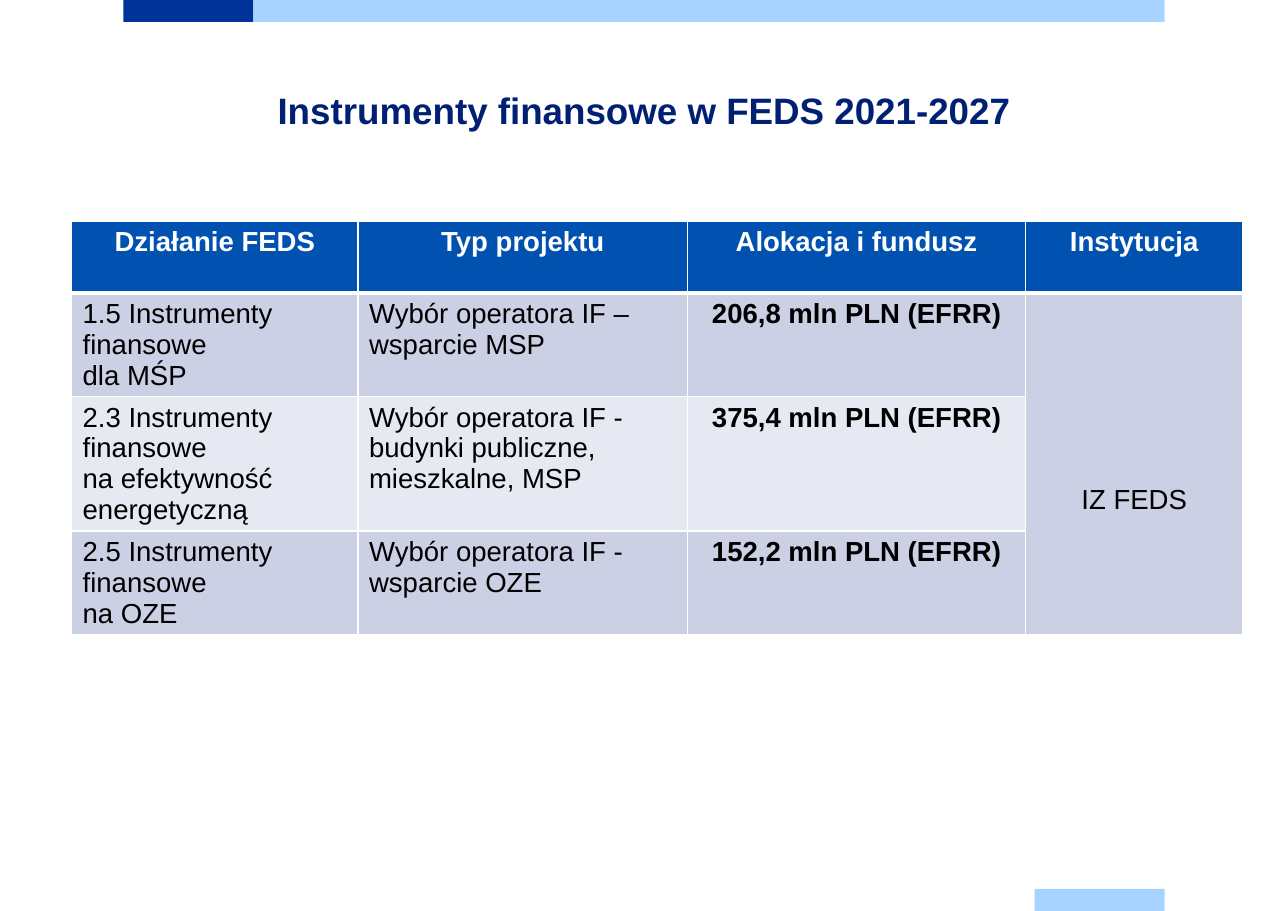
from dataclasses import dataclass

from lxml.etree import SubElement
from pptx import Presentation
from pptx.dml.color import RGBColor
from pptx.enum.shapes import MSO_SHAPE
from pptx.enum.text import MSO_ANCHOR, PP_ALIGN
from pptx.oxml.ns import qn
from pptx.slide import Slide
from pptx.table import _Cell
from pptx.text.text import _Paragraph
from pptx.util import Inches, Pt

FONT = "Arial"
COLORS = {
    "navy": "003399",
    "sky": "A6D3FF",
    "title": "002073",
    "header": "0051B0",
    "odd": "CCD0E4",
    "even": "E7E9F2",
    "white": "FFFFFF",
    "black": "000000",
}


@dataclass
class Bar:
    left: float
    top: float
    width: float
    color: str


@dataclass
class Column:
    heading: str
    width: float
    align: PP_ALIGN
    bold: bool = False


BAR_HEIGHT = 0.2
BARS = [
    Bar(1.12, 0, 1.18, "navy"),
    Bar(2.3, 0, 8.27, "sky"),
    Bar(9.39, 8.07, 1.18, "sky"),
]
COLUMNS = [
    Column("Działanie FEDS", 2.6, PP_ALIGN.LEFT),
    Column("Typ projektu", 2.99, PP_ALIGN.LEFT),
    Column("Alokacja i fundusz", 3.07, PP_ALIGN.CENTER, bold=True),
    Column("Instytucja", 1.97, PP_ALIGN.CENTER),
]
ROW_HEIGHTS = [0.65, 0.94, 1.22, 0.94]
MEASURES = [
    ["1.5 Instrumenty finansowe\ndla MŚP",
     "Wybór operatora IF – wsparcie MSP",
     "206,8 mln PLN (EFRR)", "IZ FEDS"],
    ["2.3 Instrumenty finansowe\nna efektywność energetyczną",
     "Wybór operatora IF - budynki publiczne, mieszkalne, MSP",
     "375,4 mln PLN (EFRR)", ""],
    ["2.5 Instrumenty finansowe\nna OZE",
     "Wybór operatora IF - wsparcie OZE",
     "152,2 mln PLN (EFRR)", ""],
]


def rgb(color: str) -> RGBColor:
    return RGBColor.from_string(COLORS[color])


def write(paragraph: _Paragraph, text: str, size: int, color: str,
          bold: bool, align: PP_ALIGN) -> None:
    paragraph.alignment = align
    for number, line in enumerate(text.split("\n")):
        if number:
            paragraph.add_line_break()
        run = paragraph.add_run()
        run.text = line
        run.font.name = FONT
        run.font.size = Pt(size)
        run.font.bold = bold
        run.font.color.rgb = rgb(color)


def draw_bar(slide: Slide, bar: Bar) -> None:
    strip = slide.shapes.add_shape(
        MSO_SHAPE.RECTANGLE, Inches(bar.left), Inches(bar.top),
        Inches(bar.width), Inches(BAR_HEIGHT))
    strip.shadow.inherit = False
    strip.fill.solid()
    strip.fill.fore_color.rgb = rgb(bar.color)
    strip.line.fill.background()


def style_cell(cell: _Cell, fill: str, bottom: int = 1, top: int = 1) -> None:
    properties = cell._tc.get_or_add_tcPr()
    for side, points in (("L", 1), ("R", 1), ("T", top), ("B", bottom)):
        border = SubElement(properties, qn(f"a:ln{side}"), w=str(Pt(points)))
        solid = SubElement(border, qn("a:solidFill"))
        SubElement(solid, qn("a:srgbClr"), val=COLORS["white"])
    cell.fill.solid()
    cell.fill.fore_color.rgb = rgb(fill)


def draw_measures(slide: Slide) -> None:
    measures = slide.shapes.add_table(
        len(ROW_HEIGHTS), len(COLUMNS), Inches(0.65), Inches(2.01),
        Inches(sum(column.width for column in COLUMNS)),
        Inches(sum(ROW_HEIGHTS))).table
    for row, height in zip(measures.rows, ROW_HEIGHTS):
        row.height = Inches(height)

    for c, column in enumerate(COLUMNS):
        measures.columns[c].width = Inches(column.width)
        heading = measures.cell(0, c)
        style_cell(heading, "header", bottom=3)
        write(heading.text_frame.paragraphs[0], column.heading, 18, "white",
              True, PP_ALIGN.CENTER)
        for r, measure in enumerate(MEASURES, start=1):
            cell = measures.cell(r, c)
            style_cell(cell, "odd" if r % 2 else "even", top=3 if r == 1 else 1)
            if measure[c]:
                write(cell.text_frame.paragraphs[0], measure[c], 18, "black",
                      column.bold, column.align)

    # One institution for all measures, set below the middle
    institution = measures.cell(1, 3)
    institution.merge(measures.cell(3, 3))
    institution.vertical_anchor = MSO_ANCHOR.MIDDLE
    institution.margin_top = Inches(0.66)
    institution.margin_bottom = Inches(0)


def main() -> None:
    presentation = Presentation()
    presentation.slide_width = Inches(11.69)
    presentation.slide_height = Inches(8.27)
    slide = presentation.slides.add_slide(presentation.slide_layouts[6])

    # Edge bars
    for bar in BARS:
        draw_bar(slide, bar)

    # Table of measures
    draw_measures(slide)

    # Title
    title = slide.shapes.add_textbox(
        Inches(1.16), Inches(0.75), Inches(9.37), Inches(0.5)).text_frame
    title.word_wrap = True
    write(title.paragraphs[0], "Instrumenty finansowe w FEDS 2021-2027", 24,
          "title", True, PP_ALIGN.CENTER)

    presentation.save("out.pptx")


if __name__ == "__main__":
    main()
